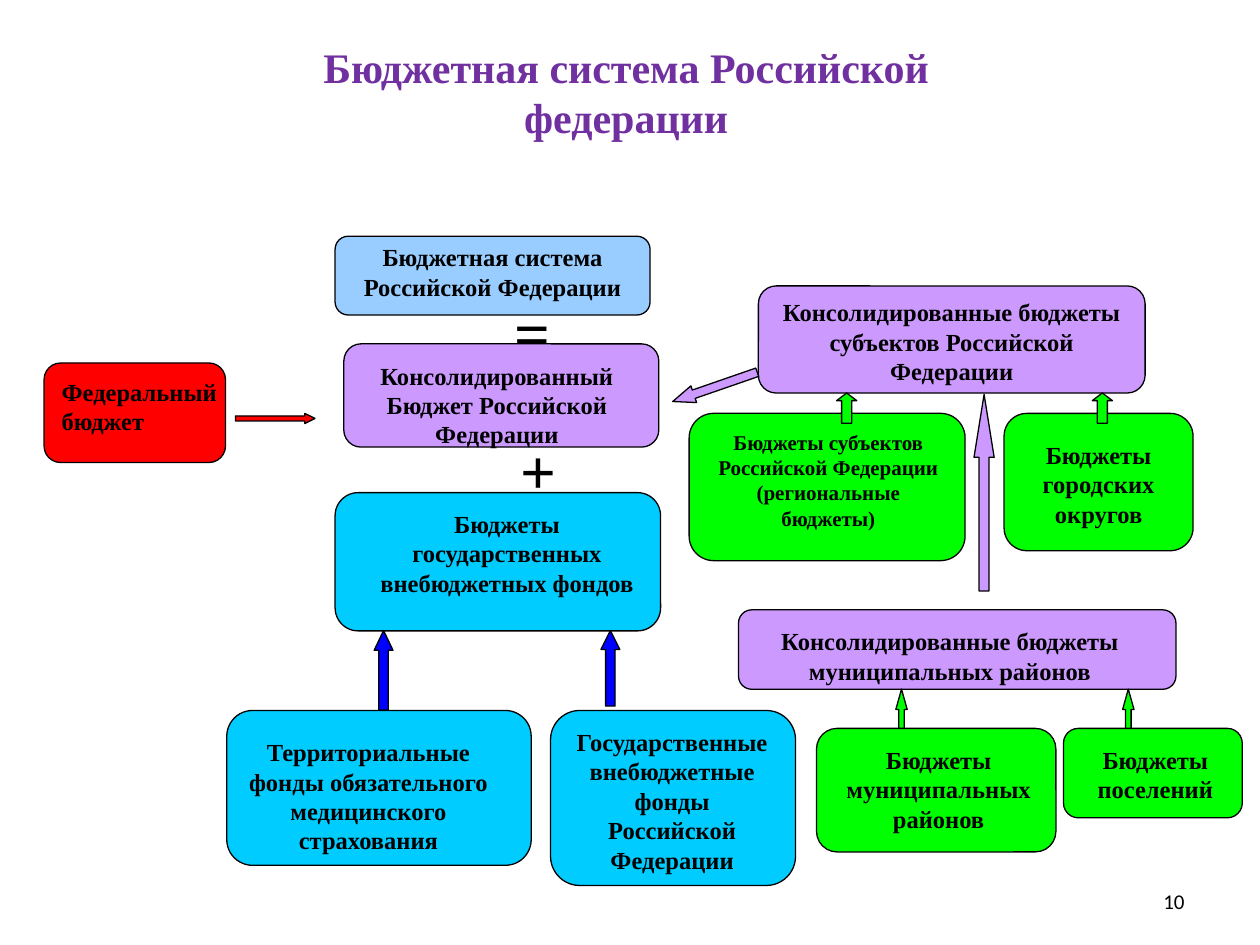
"""Draw the scheme of the Russian budget system on one slide."""
from dataclasses import dataclass

from pptx import Presentation
from pptx.dml.color import RGBColor
from pptx.enum.shapes import MSO_SHAPE
from pptx.enum.text import MSO_ANCHOR, PP_ALIGN
from pptx.util import Pt


@dataclass(frozen=True)
class Theme:
    serif: str = "Times New Roman"
    sans: str = "Calibri"
    title: str = "7030A0"
    ink: str = "000000"
    sky: str = "99CCFF"
    lilac: str = "CC99FF"
    cyan: str = "00CCFF"
    red: str = "FF0000"
    green: str = "00FF00"
    blue: str = "0000FF"
    head: int = 24
    body: int = 14
    small: int = 12
    sign: int = 36
    line: float = 0.75


THEME = Theme()


def write(frame, text, size, color=THEME.ink, font=THEME.serif,
          bold=True, align=PP_ALIGN.CENTER):
    frame.word_wrap = True
    frame.text = text
    for para in frame.paragraphs:
        para.alignment = align
        for run in para.runs:
            run.font.name = font
            run.font.size = Pt(size)
            run.font.bold = bold
            run.font.color.rgb = RGBColor.from_string(color)


def label(slide, box, text, size, **style):
    frame = slide.shapes.add_textbox(*map(Pt, box)).text_frame
    write(frame, text, size, **style)
    return frame


def block(slide, kind, box, fill):
    shape = slide.shapes.add_shape(kind, *map(Pt, box))
    shape.shadow.inherit = False
    shape.fill.solid()
    shape.fill.fore_color.rgb = RGBColor.from_string(fill)
    shape.line.color.rgb = RGBColor.from_string(THEME.ink)
    shape.line.width = Pt(THEME.line)
    return shape


def budget(slide, box, fill, text, pads, size=THEME.body, align=PP_ALIGN.CENTER):
    shape = block(slide, MSO_SHAPE.FLOWCHART_ALTERNATE_PROCESS, box, fill)
    frame = shape.text_frame
    frame.vertical_anchor = MSO_ANCHOR.TOP
    frame.margin_left, frame.margin_top, frame.margin_right = map(Pt, pads)
    frame.margin_bottom = 0
    write(frame, text, size, align=align)


def arrow(slide, kind, box, fill, head, turn=0):
    shape = block(slide, kind, box, fill)
    shape.adjustments[1] = head
    shape.rotation = turn


def main():
    deck = Presentation()
    deck.slide_width, deck.slide_height = Pt(720), Pt(540)
    slide = deck.slides.add_slide(deck.slide_layouts[6])
    t = THEME
    label(slide, (121.7, 20.2, 472.3, 33.8),
          "Бюджетная система Российской федерации", t.head, color=t.title)

    for box, fill, text, pads in (
        ((191.5, 135, 180, 45), t.sky,
         "Бюджетная система Российской Федерации", (7.2, 1.4, 7.2)),
        ((196.5, 196.5, 180, 59), t.lilac,
         "Консолидированный Бюджет Российской Федерации", (10.3, 6.7, 15.3)),
        ((191.5, 281.5, 186, 79), t.cyan,
         "Бюджеты государственных\nвнебюджетных фондов", (19.8, 5.5, 9.3)),
        ((314.6, 406, 140, 100), t.cyan,
         "Государственные\nвнебюджетные фонды\nРоссийской Федерации", (8.1, 4.5, 9.1)),
        ((129.6, 406, 174, 88.5), t.cyan,
         "Территориальные фонды обязательного медицинского страхования",
         (7.9, 10.9, 19.9)),
        ((433.4, 163.4, 221, 61.2), t.lilac,
         "Консолидированные бюджеты субъектов Российской Федерации", (7.2, 3.6, 7.2)),
        ((422, 348.5, 250, 45.4), t.lilac,
         "Консолидированные бюджеты\nмуниципальных районов", (10.7, 7.1, 18.9)),
        ((573.8, 236.2, 108, 78.5), t.green,
         "Бюджеты\nгородских округов", (9.2, 11.3, 9.1)),
        ((607.7, 416.2, 102.2, 51.1), t.green,
         "Бюджеты поселений", (11.9, 6.8, 9)),
        ((466.6, 416.2, 136.8, 70.6), t.green,
         "Бюджеты муниципальных районов", (9.5, 5.9, 6.7)),
    ):
        budget(slide, box, fill, text, pads)
    budget(slide, (25.2, 207.4, 103.7, 56.9), t.red, "Федеральный\nбюджет",
           (7.3, 5.1, 0), align=PP_ALIGN.LEFT)
    budget(slide, (393.8, 236.2, 157.7, 84.2), t.green,
           "Бюджеты субъектов\nРоссийской Федерации\n(региональные бюджеты)",
           (8.9, 5.2, 7.4), size=t.small)

    label(slide, (242, 164, 125, 50), "=", t.sign)
    label(slide, (242, 243, 131, 50), "+", t.sign)

    for box, fill, head in (
        ((213.8, 360.3, 10.8, 45.4), t.blue, 1.05),
        ((343.4, 360.3, 10.8, 43.2), t.blue, 1),
        ((478.1, 224.6, 11.5, 17.3), t.green, 0.38),
        ((624.2, 224.6, 11.5, 17.3), t.green, 0.38),
        ((511.9, 393.8, 6.5, 22.3), t.green, 1.79),
        ((641.5, 393.8, 6.5, 22.3), t.green, 1.79),
    ):
        arrow(slide, MSO_SHAPE.UP_ARROW, box, fill, head)
    for box, fill, head, turn in (
        ((134.6, 236.2, 45.4, 5.8), t.red, 1, 0),
        ((383, 216, 51.1, 10.1), t.lilac, 1.26, 160.9),
        ((506.2, 275.8, 112.3, 11.5), t.lilac, 3.12, 270),
    ):
        arrow(slide, MSO_SHAPE.RIGHT_ARROW, box, fill, head, turn)

    page = label(slide, (516.2, 500.4, 167.8, 28.8), "10", t.small,
                 font=t.sans, bold=False, align=PP_ALIGN.RIGHT)
    page.vertical_anchor = MSO_ANCHOR.MIDDLE
    deck.save("out.pptx")


if __name__ == "__main__":
    main()
